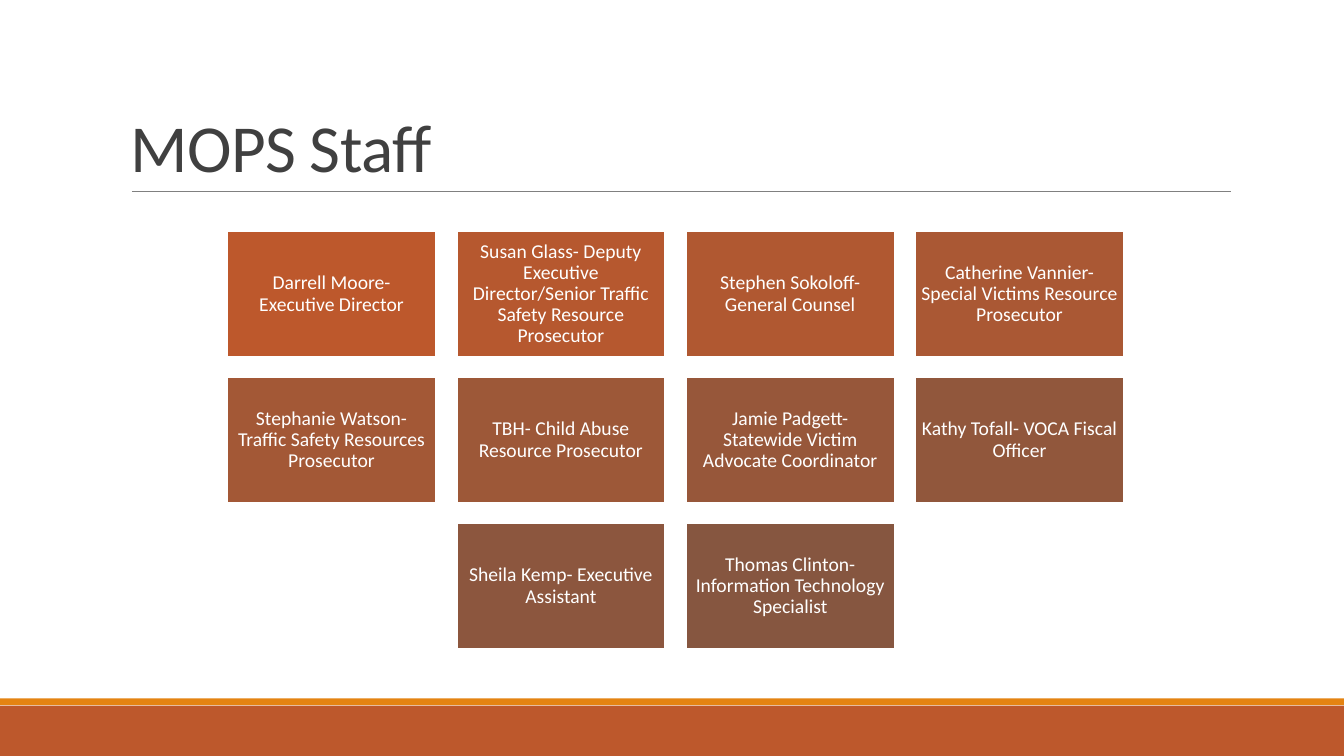
"""Build the MOPS staff slide."""
from lxml.etree import SubElement
from pptx import Presentation
from pptx.dml.color import RGBColor
from pptx.enum.shapes import MSO_CONNECTOR as Connector, MSO_SHAPE as Shape
from pptx.enum.text import MSO_ANCHOR as Anchor, PP_ALIGN as Align
from pptx.oxml.ns import qn
from pptx.util import Pt

WHITE = RGBColor(0xFF, 0xFF, 0xFF)
TITLE_GREY = RGBColor(0x40, 0x40, 0x40)
RULE_GREY = RGBColor(0x80, 0x80, 0x80)
RUST = RGBColor(0xBD, 0x58, 0x2C)
ORANGE = RGBColor(0xE4, 0x83, 0x12)
CARD_COLORS = [RGBColor.from_string(code) for code in (
    "BD582C", "B6582F", "B05831", "AA5834", "A35836",
    "9D5838", "97573A", "91573C", "8C563E", "865640")]

STAFF = [
    "Darrell Moore- Executive Director",
    "Susan Glass- Deputy Executive Director/Senior Traffic Safety Resource Prosecutor",
    "Stephen Sokoloff- General Counsel",
    "Catherine Vannier- Special Victims Resource Prosecutor",
    "Stephanie Watson- Traffic Safety Resources Prosecutor",
    "TBH- Child Abuse Resource Prosecutor",
    "Jamie Padgett- Statewide Victim Advocate Coordinator",
    "Kathy Tofall- VOCA Fiscal Officer",
    "Sheila Kemp- Executive Assistant",
    "Thomas Clinton- Information Technology Specialist",
]

SLIDE_WIDTH, SLIDE_HEIGHT = 960, 540
COLUMNS = 4
GRID_LEFT, GRID_TOP = 162.4, 165.4
CARD_WIDTH, CARD_HEIGHT, GAP = 148.9, 89.4, 14.9

TITLE_FRAME = {"word_wrap": True, "vertical_anchor": Anchor.BOTTOM}
TITLE_PARAGRAPH = {"line_spacing": 0.85, "alignment": Align.LEFT}
TITLE_FONT = {"name": "Calibri", "size": Pt(48)}
CARD_FRAME = {
    "word_wrap": True, "vertical_anchor": Anchor.MIDDLE,
    "margin_left": Pt(4.2), "margin_right": Pt(4.2),
    "margin_top": Pt(4.2), "margin_bottom": Pt(4.2)}
CARD_PARAGRAPH = {"line_spacing": 0.9, "alignment": Align.CENTER}
CARD_FONT = {"name": "Calibri", "size": Pt(14)}


def apply_format(target, values):
    """Set every attribute named in values on the target."""
    for name, value in values.items():
        setattr(target, name, value)


def write_text(shape, text, color, frame_format, paragraph_format, font_format):
    """Fill a shape with one formatted paragraph and return its run."""
    apply_format(shape.text_frame, frame_format)
    paragraph = shape.text_frame.paragraphs[0]
    apply_format(paragraph, paragraph_format)
    run = paragraph.add_run()
    run.text = text
    apply_format(run.font, font_format)
    run.font.color.rgb = color
    return run


def add_rectangle(slide, left, top, width, height, fill):
    """Add a flat rectangle without an outline."""
    shape = slide.shapes.add_shape(
        Shape.RECTANGLE, Pt(left), Pt(top), Pt(width), Pt(height))
    shape.shadow.inherit = False
    shape.fill.solid()
    shape.fill.fore_color.rgb = fill
    shape.line.fill.background()
    return shape


def add_rule(slide, left, right, top):
    """Add the thin horizontal line under the title."""
    rule = slide.shapes.add_connector(
        Connector.STRAIGHT, Pt(left), Pt(top), Pt(right), Pt(top))
    rule.line.color.rgb = RULE_GREY
    rule.line.width = Pt(0.5)
    SubElement(rule._element.spPr, qn("a:effectLst"))


def add_title(slide, text):
    """Add the slide title with slightly tightened letters."""
    box = slide.shapes.add_textbox(Pt(86.4), Pt(22.6), Pt(792), Pt(114.2))
    run = write_text(box, text, TITLE_GREY,
                     TITLE_FRAME, TITLE_PARAGRAPH, TITLE_FONT)
    run._r.get_or_add_rPr().set("spc", "-50")


def add_card(slide, left, top, text, fill):
    """Add one staff card."""
    card = add_rectangle(slide, left, top, CARD_WIDTH, CARD_HEIGHT, fill)
    card.line.color.rgb = WHITE
    card.line.width = Pt(1.25)
    write_text(card, text, WHITE, CARD_FRAME, CARD_PARAGRAPH, CARD_FONT)


def add_staff_grid(slide):
    """Lay out the staff cards in rows, centring a short last row."""
    for index, (text, fill) in enumerate(zip(STAFF, CARD_COLORS)):
        row, column = divmod(index, COLUMNS)
        row_length = min(COLUMNS, len(STAFF) - row * COLUMNS)
        column += (COLUMNS - row_length) / 2
        add_card(slide, GRID_LEFT + column * (CARD_WIDTH + GAP),
                 GRID_TOP + row * (CARD_HEIGHT + GAP), text, fill)


def main():
    """Create and save the presentation."""
    presentation = Presentation()
    presentation.slide_width = Pt(SLIDE_WIDTH)
    presentation.slide_height = Pt(SLIDE_HEIGHT)
    slide = presentation.slides.add_slide(presentation.slide_layouts[6])
    add_rectangle(slide, 0, 504, SLIDE_WIDTH, 36, RUST)
    add_rectangle(slide, 0, 498.8, SLIDE_WIDTH, 5, ORANGE)
    add_rule(slide, 94.3, 879, 136.8)
    add_title(slide, "MOPS Staff")
    add_staff_grid(slide)
    presentation.save("out.pptx")


if __name__ == "__main__":
    main()
